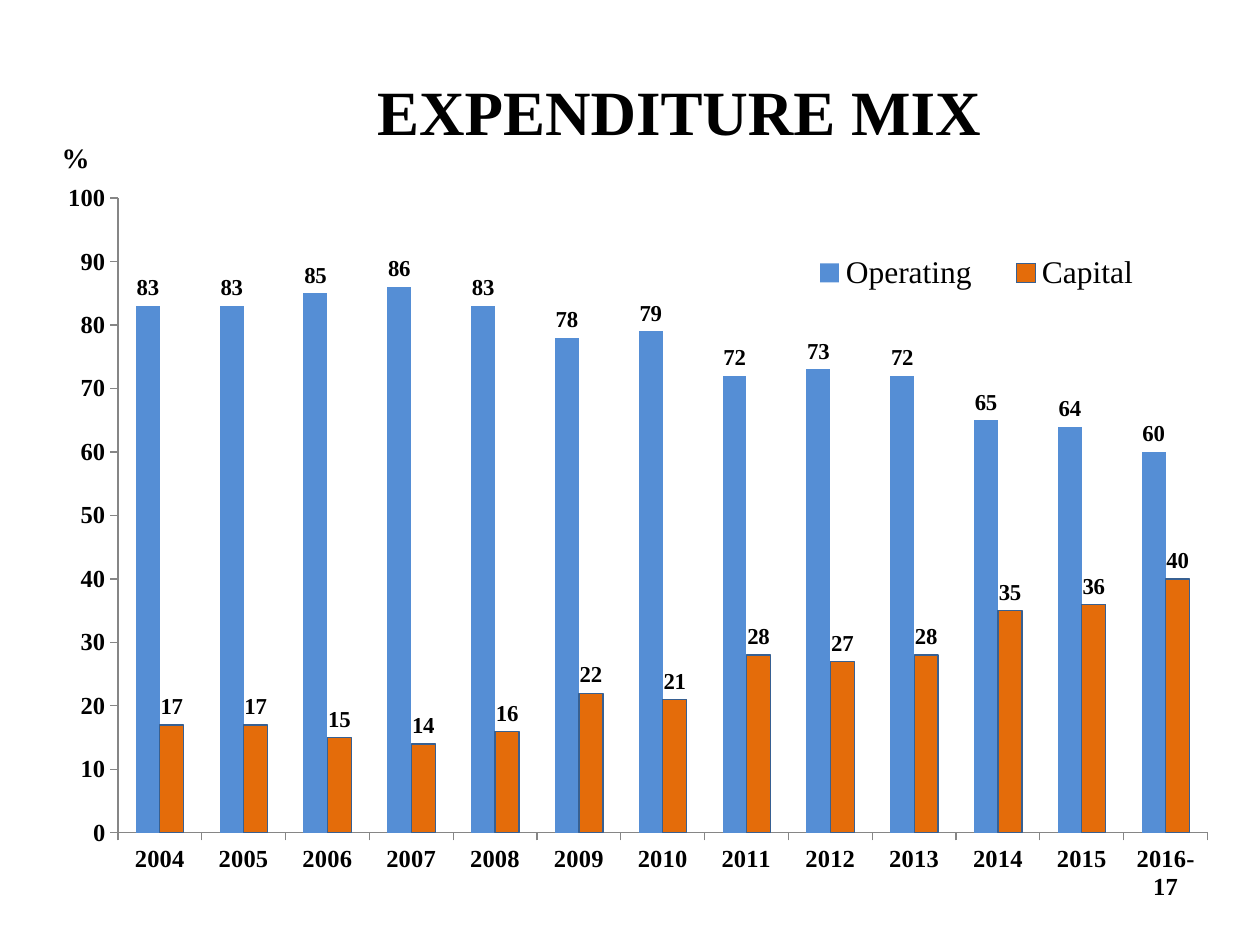
from lxml import etree
from pptx import Presentation, util as u
from pptx.chart.data import CategoryChartData
from pptx.dml.color import RGBColor
from pptx.enum import chart as ch, text as t
from pptx.oxml.ns import qn

BLACK = RGBColor(0, 0, 0)
GREY = RGBColor(0x86, 0x86, 0x86)
BLUE = RGBColor(0x55, 0x8E, 0xD5)
ORANGE = RGBColor(0xE4, 0x6C, 0x0A)
NAVY = RGBColor(0x37, 0x60, 0x92)
FACE = "Times New Roman"
WIDE, HIGH = u.Inches(10), u.Inches(7.5)

YEARS = [str(y) for y in range(2004, 2016)] + ["2016-17"]
# name, values, fill, outline
SERIES = [
    ("Operating", (83, 83, 85, 86, 83, 78, 79, 72, 73, 72, 65, 64, 60), BLUE, None),
    ("Capital", (17, 17, 15, 14, 16, 22, 21, 28, 27, 28, 35, 36, 40), ORANGE, NAVY),
]


def box(x, y, w, h):
    """Turn shares of the slide into lengths."""
    return [int(v) for v in (x * WIDE, y * HIGH, w * WIDE, h * HIGH)]


def style(font, size, bold=True):
    for key, val in dict(name=FACE, size=u.Pt(size), bold=bold).items():
        setattr(font, key, val)
    font.color.rgb = BLACK


def write(shape, words, size):
    """Fill a shape with one centred bold line."""
    frame = shape.text_frame
    frame.word_wrap = True
    para = frame.paragraphs[0]
    para.alignment = t.PP_ALIGN.CENTER
    run = para.add_run()
    run.text = words
    style(run.font, size)
    return frame


def title(slide, area):
    shape = slide.shapes.title
    for key, val in zip(("left", "top", "width", "height"), area):
        setattr(shape, key, val)
    write(shape, "EXPENDITURE MIX", 36).vertical_anchor = t.MSO_ANCHOR.MIDDLE


def unit(slide, area):
    frame = write(slide.shapes.add_textbox(*area), "%", 16)
    for side, gap in dict(left=0.08, right=0.08, top=0.04, bottom=0.04).items():
        setattr(frame, "margin_" + side, u.Inches(gap))


def place(parent, index, shares, inner=False):
    """Set a manual layout, in shares of the chart, on a chart part."""
    for old in parent.findall(qn("c:layout")):
        parent.remove(old)
    layout = etree.Element(qn("c:layout"))
    manual = etree.SubElement(layout, qn("c:manualLayout"))
    rules = [("layoutTarget", "inner")] if inner else []
    rules += [("xMode", "edge"), ("yMode", "edge"), *zip("xywh", shares)]
    for tag, val in rules:
        etree.SubElement(manual, qn("c:" + tag)).set("val", str(val))
    parent.insert(index, layout)


def bars(slide, area):
    data = CategoryChartData(number_format="0")
    data.categories = YEARS
    for name, vals, *_ in SERIES:
        data.add_series(name, vals)
    kind = ch.XL_CHART_TYPE.COLUMN_CLUSTERED
    chart = slide.shapes.add_chart(kind, *area, data).chart
    chart.has_title = False
    style(chart.font, 18, False)

    # Axes
    for axis in (chart.category_axis, chart.value_axis):
        axis.has_major_gridlines = False
        axis.major_tick_mark = ch.XL_TICK_MARK.OUTSIDE
        axis.format.line.color.rgb = GREY
        style(axis.tick_labels.font, 14)
    scale = dict(minimum_scale=0, maximum_scale=100, major_unit=10)
    for key, val in scale.items():
        setattr(chart.value_axis, key, val)

    # Columns and their labels
    plot = chart.plots[0]
    plot.gap_width = 150
    plot.vary_by_categories = False
    for series, (_, _, fill, edge) in zip(plot.series, SERIES):
        series.format.fill.solid()
        series.format.fill.fore_color.rgb = fill
        if edge:
            series.format.line.color.rgb = edge
            series.format.line.width = u.Pt(0.75)
        labels = series.data_labels
        form = dict(show_value=True, number_format="0",
                    number_format_is_linked=False,
                    position=ch.XL_LABEL_POSITION.OUTSIDE_END)
        for key, val in form.items():
            setattr(labels, key, val)
        style(labels.font, 13)

    # Legend and plot area
    chart.has_legend = True
    legend = chart.legend
    legend.position = ch.XL_LEGEND_POSITION.RIGHT
    legend.include_in_layout = False
    style(legend.font, 18, False)
    place(legend._element, 1, (0.64, 0.1, 0.31, 0.07))
    region = chart._chartSpace.chart.plotArea
    place(region, 0, (0.096, 0.034, 0.887, 0.857), inner=True)


def main():
    deck = Presentation()
    deck.slide_width, deck.slide_height = WIDE, HIGH
    slide = deck.slides.add_slide(deck.slide_layouts[5])
    title(slide, box(0.06, 0.067, 0.958, 0.1))
    bars(slide, box(0, 0.183, 0.975, 0.784))
    unit(slide, box(0.021, 0.143, 0.078, 0.049))
    deck.save("out.pptx")


if __name__ == "__main__":
    main()
